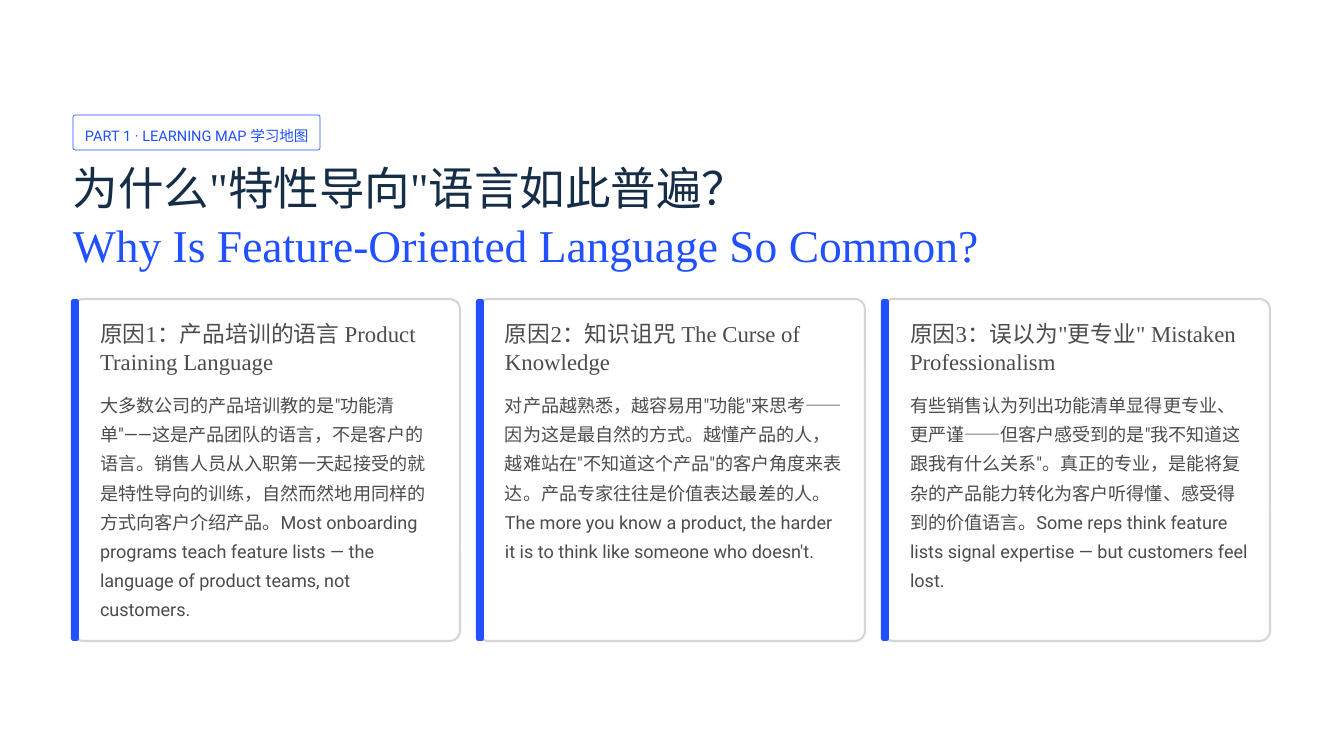
"""Build the slide on why feature-oriented language is so common."""
from pptx import Presentation
from pptx import util as u
from pptx.dml.color import RGBColor
from pptx.enum import shapes, text

PX = 914400 / 84
COLORS = {"blue": "2150FE", "navy": "152D47", "gray": "4C4C4D",
          "border": "D8D4D4", "white": "FFFFFF"}
SERIF, SANS = "Times New Roman", "Roboto"

REASONS = [
    ("原因1：产品培训的语言 Product Training Language",
     "大多数公司的产品培训教的是\"功能清单\"——这是产品团队的语言，不是客户的语言。"
     "销售人员从入职第一天起接受的就是特性导向的训练，自然而然地用同样的方式向客户介绍产品。"
     "Most onboarding programs teach feature lists — the language of product teams, "
     "not customers."),
    ("原因2：知识诅咒 The Curse of Knowledge",
     "对产品越熟悉，越容易用\"功能\"来思考——因为这是最自然的方式。越懂产品的人，"
     "越难站在\"不知道这个产品\"的客户角度来表达。产品专家往往是价值表达最差的人。"
     "The more you know a product, the harder it is to think like someone who doesn't."),
    ("原因3：误以为\"更专业\" Mistaken Professionalism",
     "有些销售认为列出功能清单显得更专业、更严谨——但客户感受到的是\"我不知道这跟我有什么关系\"。"
     "真正的专业，是能将复杂的产品能力转化为客户听得懂、感受得到的价值语言。"
     "Some reps think feature lists signal expertise — but customers feel lost."),
]


def px(n):
    """Turn pixels into EMU."""
    return u.Emu(round(n * PX))


def rgb(name):
    """Look up a named colour."""
    return RGBColor.from_string(COLORS[name])


def add_round(s, box, adj, fill=None, line=None, width=0):
    """Add a rounded rectangle."""
    sp = s.shapes.add_shape(shapes.MSO_SHAPE.ROUNDED_RECTANGLE, *map(px, box))
    sp.adjustments[0] = adj
    sp.shadow.inherit = False
    if fill:
        sp.fill.solid()
        sp.fill.fore_color.rgb = rgb(fill)
    else:
        sp.fill.background()
    if line:
        sp.line.color.rgb = rgb(line)
        sp.line.width = u.Pt(width)
    else:
        sp.line.fill.background()


def add_text(s, box, lines, font, size, spacing, wrap=True):
    """Add a text box with one paragraph per (text, colour) pair."""
    tf = s.shapes.add_textbox(*map(px, box)).text_frame
    tf.word_wrap = wrap
    tf.auto_size = text.MSO_AUTO_SIZE.NONE
    tf.margin_left = tf.margin_right = tf.margin_top = tf.margin_bottom = 0
    for i, (words, color) in enumerate(lines):
        p = tf.add_paragraph() if i else tf.paragraphs[0]
        p.line_spacing = u.Pt(spacing)
        r = p.add_run()
        r.text = words
        r.font.name = font
        r.font.size = u.Pt(size)
        r.font.color.rgb = rgb(color)


def add_header(s, x, y, w):
    """Place the section tag and the two-language title."""
    add_round(s, (x, y, 247, 35), 0.06, line="blue", width=0.6)
    add_text(s, (x + 12, y + 6, 223, 24),
             [("PART 1 · LEARNING MAP 学习地图", "blue")], SANS, 12.5, 20, wrap=False)
    add_text(s, (x, y + 43, w, 114),
             [("为什么\"特性导向\"语言如此普遍？", "navy"),
              ("Why Is Feature-Oriented Language So Common?", "blue")],
             SERIF, 39, 48.5)


def add_card(s, x, y, w, h, title, body):
    """Place one reason card with its accent bar."""
    add_round(s, (x, y, w, h), 0.03, fill="white", line="border", width=1.8)
    add_round(s, (x - 2, y, 8, h), 0.33, fill="blue")
    inner = w - 47
    add_text(s, (x + 27, y + 20, inner, 57), [(title, "gray")], SERIF, 19.5, 24)
    add_text(s, (x + 27, y + 88, inner, h - 108), [(body, "gray")], SANS, 15.5, 25)


def main():
    """Build and save the slide."""
    prs = Presentation()
    prs.slide_width, prs.slide_height = px(1344), px(756)
    s = prs.slides.add_slide(prs.slide_layouts[6])
    s.background.fill.solid()
    s.background.fill.fore_color.rgb = rgb("white")
    left, card_w, gap = 73, 387, 18
    add_header(s, left, 115, 916)
    for i, (title, body) in enumerate(REASONS):
        add_card(s, left + i * (card_w + gap), 299, card_w, 342, title, body)
    prs.save("out.pptx")


if __name__ == "__main__":
    main()
